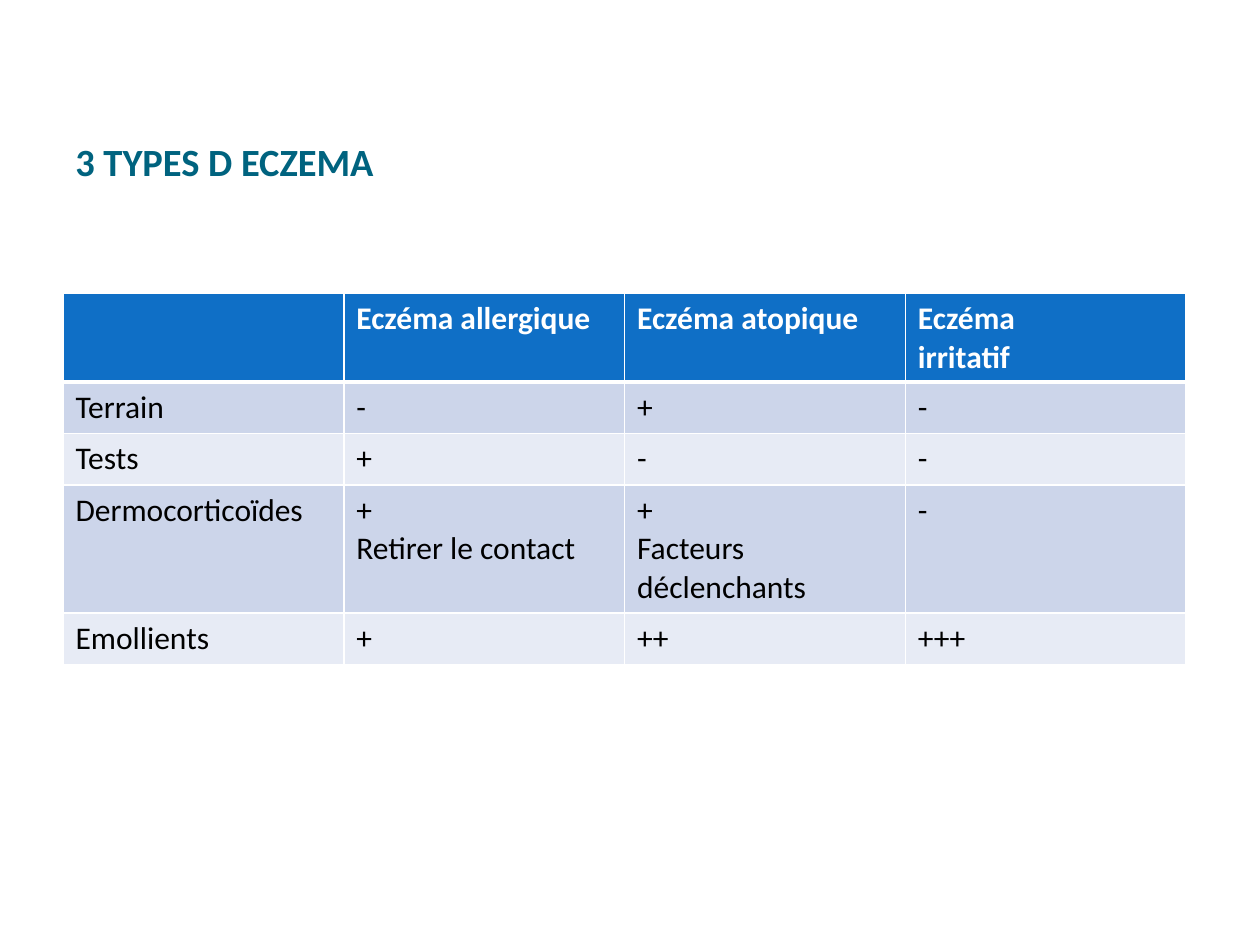
"""Build a slide comparing three types of eczema in a table."""
from dataclasses import dataclass

import pptx
import pptx.dml.color
import pptx.enum.text
import pptx.oxml
import pptx.oxml.ns
import pptx.util

Cm = pptx.util.Cm
Pt = pptx.util.Pt
FONT = "Calibri"
WHITE = "FFFFFF"


@dataclass
class TextStyle:
    size: float
    color: str
    bold: bool = False


@dataclass
class TableRow:
    height: float
    fill: str
    style: TextStyle
    texts: tuple[str, ...]
    top_border: float = 1
    bottom_border: float = 1


TITLE = TextStyle(22, "00637F", True)
HEADER = TextStyle(18, WHITE, True)
BODY = TextStyle(18, "000000")
DARK_BAND, LIGHT_BAND = "CCD5EA", "E7EBF5"

ROWS = (
    TableRow(1.78, "0F6FC6", HEADER,
             ("", "Eczéma allergique", "Eczéma atopique", "Eczéma\nirritatif"),
             bottom_border=3),
    TableRow(1.04, DARK_BAND, BODY, ("Terrain", "-", "+", "-"), top_border=3),
    TableRow(1.04, LIGHT_BAND, BODY, ("Tests", "+", "-", "-")),
    TableRow(2.58, DARK_BAND, BODY,
             ("Dermocorticoïdes", "+\nRetirer le contact",
              "+\nFacteurs déclenchants", "-")),
    TableRow(1.04, LIGHT_BAND, BODY, ("Emollients", "+", "++", "+++")),
)


def rgb(value: str) -> pptx.dml.color.RGBColor:
    return pptx.dml.color.RGBColor.from_string(value)


def write(frame, text: str, style: TextStyle) -> None:
    frame.text = text
    for para in frame.paragraphs:
        for span in para.runs:
            span.font.name = FONT
            span.font.size = Pt(style.size)
            span.font.bold = style.bold
            span.font.color.rgb = rgb(style.color)


def add_border(cell, side: str, width: float) -> None:
    cell._tc.get_or_add_tcPr().append(pptx.oxml.parse_xml(
        f'<a:ln{side} {pptx.oxml.ns.nsdecls("a")} w="{Pt(width)}">'
        f'<a:solidFill><a:srgbClr val="{WHITE}"/></a:solidFill></a:ln{side}>'))


def add_title(page, text: str) -> None:
    box = page.shapes.add_textbox(Cm(1.27), Cm(0.61), Cm(10.59), Cm(3.23))
    frame = box.text_frame
    frame.word_wrap = True
    frame.vertical_anchor = pptx.enum.text.MSO_ANCHOR.BOTTOM
    write(frame, text, TITLE)
    frame.paragraphs[0].line_spacing = Pt(20)


def add_comparison(page, rows: tuple[TableRow, ...]) -> None:
    height = sum(row.height for row in rows)
    table = page.shapes.add_table(
        len(rows), len(rows[0].texts),
        Cm(1.27), Cm(5.92), Cm(22.64), Cm(height)).table
    for index, row in enumerate(rows):
        table.rows[index].height = Cm(row.height)
        borders = {"L": 1, "R": 1, "T": row.top_border, "B": row.bottom_border}
        for cell, text in zip(table.rows[index].cells, row.texts):
            write(cell.text_frame, text, row.style)
            for side, width in borders.items():
                add_border(cell, side, width)
            cell.fill.solid()
            cell.fill.fore_color.rgb = rgb(row.fill)


def main() -> None:
    deck = pptx.Presentation()
    deck.slide_width, deck.slide_height = Cm(25.4), Cm(19.05)
    page = deck.slides.add_slide(deck.slide_layouts[6])
    add_title(page, "3 TYPES D ECZEMA")
    add_comparison(page, ROWS)
    deck.save("out.pptx")


if __name__ == "__main__":
    main()
